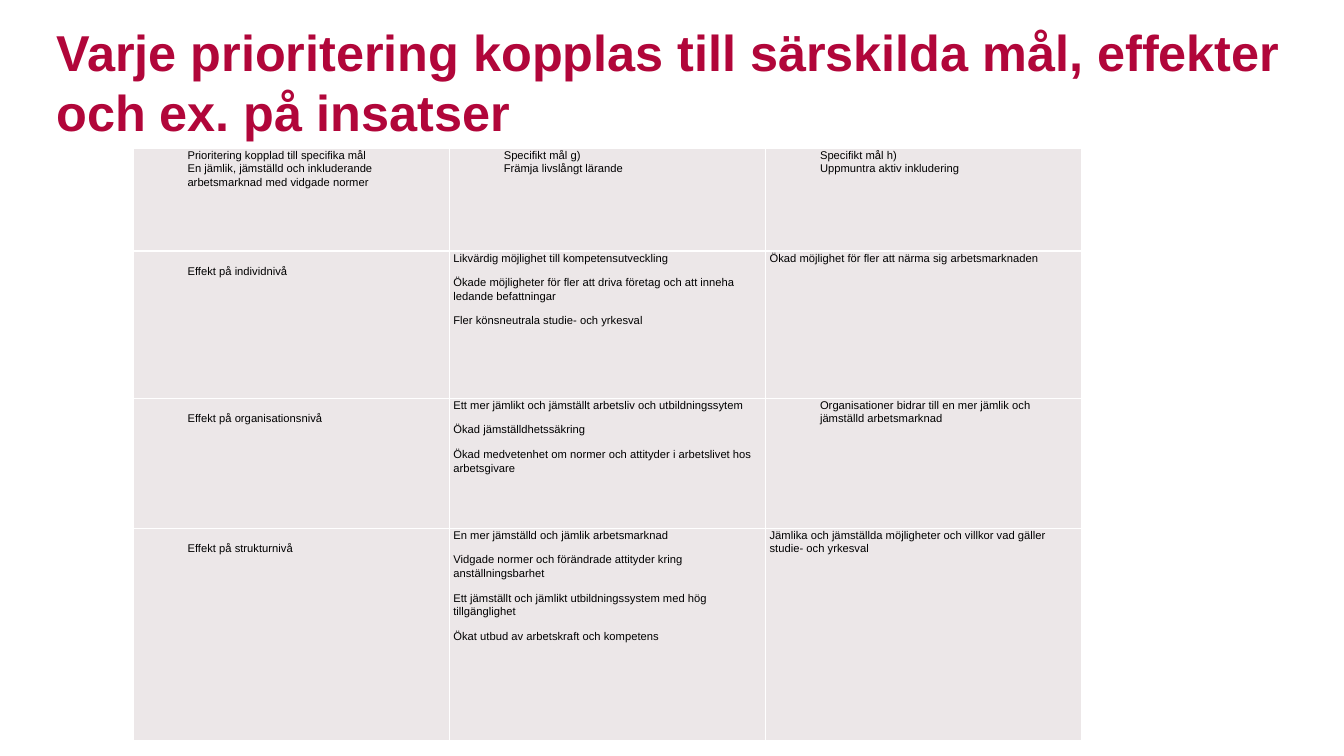
"""Build a slide linking a priority to specific goals and effects at three levels."""
import pptx
import pptx.dml.color
import pptx.enum.text
import pptx.oxml
import pptx.oxml.ns
import pptx.util

Inches = pptx.util.Inches
Pt = pptx.util.Pt
RGBColor = pptx.dml.color.RGBColor

CRIMSON = RGBColor(0xB1, 0x06, 0x3A)
BLACK = RGBColor(0, 0, 0)
WHITE = RGBColor(0xFF, 0xFF, 0xFF)
WARM_GREY = RGBColor(0xEC, 0xE7, 0xE8)

TITLE_FONT = {"name": "Arial", "size": Pt(36), "bold": True}
CELL_FONT = {"name": "Arial", "size": Pt(8), "bold": False}
TITLE_FRAME = {
    "word_wrap": True,
    "vertical_anchor": pptx.enum.text.MSO_ANCHOR.MIDDLE,
    "margin_bottom": Inches(0.59),
}
CELL_MARGINS = {
    "margin_left": Inches(0.04),
    "margin_right": Inches(0.04),
    "margin_top": 0,
    "margin_bottom": 0,
}
PLAIN = {"indent": 0, "after": Pt(8), "top": 0}
INDENTED = {"indent": Inches(0.5), "after": Pt(0), "top": 0}
LEVEL = {**INDENTED, "top": Inches(0.13)}

TITLE = "Varje prioritering kopplas till särskilda mål, effekter och ex. på insatser"
ROW_HEIGHTS = [1.02, 1.46, 1.29, 2.11]
EFFECTS = [
    [
        (INDENTED, ["Prioritering kopplad till specifika mål",
                    "En jämlik, jämställd och inkluderande arbetsmarknad med vidgade normer"]),
        (INDENTED, ["Specifikt mål g)", "Främja livslångt lärande"]),
        (INDENTED, ["Specifikt mål h)", "Uppmuntra aktiv inkludering"]),
    ],
    [
        (LEVEL, ["Effekt på individnivå"]),
        (PLAIN, ["Likvärdig möjlighet till kompetensutveckling",
                 "Ökade möjligheter för fler att driva företag och att inneha ledande befattningar",
                 "Fler könsneutrala studie- och yrkesval"]),
        (PLAIN, ["Ökad möjlighet för fler att närma sig arbetsmarknaden"]),
    ],
    [
        (LEVEL, ["Effekt på organisationsnivå"]),
        (PLAIN, ["Ett mer jämlikt och jämställt arbetsliv och utbildningssytem",
                 "Ökad jämställdhetssäkring",
                 "Ökad medvetenhet om normer och attityder i arbetslivet hos arbetsgivare"]),
        (INDENTED, ["Organisationer bidrar till en mer jämlik och jämställd arbetsmarknad"]),
    ],
    [
        (LEVEL, ["Effekt på strukturnivå"]),
        (PLAIN, ["En mer jämställd och jämlik arbetsmarknad",
                 "Vidgade normer och förändrade attityder kring anställningsbarhet",
                 "Ett jämställt och jämlikt utbildningssystem med hög tillgänglighet",
                 "Ökat utbud av arbetskraft och kompetens"]),
        (PLAIN, ["Jämlika och jämställda möjligheter och villkor vad gäller studie- och yrkesval"]),
    ],
]


def apply_format(target, values):
    """Set each named attribute on the target."""
    for name, value in values.items():
        setattr(target, name, value)


def write_paragraph(paragraph, wording, font, colour):
    """Write one run of text in the given font and colour."""
    run = paragraph.add_run()
    run.text = wording
    apply_format(run.font, font)
    run.font.color.rgb = colour


def add_title(slide, left, top, width, height):
    """Place the slide heading in the given box."""
    heading = slide.shapes.add_textbox(left, top, width, height)
    apply_format(heading.text_frame, TITLE_FRAME)
    write_paragraph(heading.text_frame.paragraphs[0], TITLE, TITLE_FONT, CRIMSON)


def add_borders(cell):
    """Draw thin white lines on all four sides of a cell."""
    properties = cell._tc.get_or_add_tcPr()
    for side in "LRTB":
        properties.append(pptx.oxml.parse_xml(
            f'<a:ln{side} {pptx.oxml.ns.nsdecls("a")} w="{Pt(1)}">'
            f'<a:solidFill><a:srgbClr val="{WHITE}"/></a:solidFill></a:ln{side}>'))


def fill_cell(cell, layout, wordings):
    """Format one cell and write its paragraphs."""
    add_borders(cell)
    cell.fill.solid()
    cell.fill.fore_color.rgb = WARM_GREY
    apply_format(cell, {**CELL_MARGINS, "margin_top": layout["top"]})
    frame = cell.text_frame
    for index, wording in enumerate(wordings):
        paragraph = frame.add_paragraph() if index else frame.paragraphs[0]
        apply_format(paragraph, {"line_spacing": 1.07, "space_after": layout["after"]})
        paragraph._p.get_or_add_pPr().set("marL", str(layout["indent"]))
        write_paragraph(paragraph, wording, CELL_FONT, BLACK)


def add_effects_table(slide, left, top, width, height):
    """Place the table of goals and effects in the given box."""
    table = slide.shapes.add_table(
        len(EFFECTS), len(EFFECTS[0]), left, top, width, height).table
    apply_format(table, {"first_row": False, "horz_banding": False})
    for row, share, contents in zip(table.rows, ROW_HEIGHTS, EFFECTS):
        row.height = round(height * share / sum(ROW_HEIGHTS))
        for cell, (layout, wordings) in zip(row.cells, contents):
            fill_cell(cell, layout, wordings)


def main():
    """Build the slide and save it."""
    deck = pptx.Presentation()
    apply_format(deck, {"slide_width": Inches(13.33), "slide_height": Inches(7.5)})
    slide = deck.slides.add_slide(deck.slide_layouts[6])
    add_title(slide, Inches(0.46), Inches(0.31), Inches(12.45), Inches(1.54))
    add_effects_table(slide, Inches(1.32), Inches(1.47), Inches(9.41), Inches(5.88))
    deck.save("out.pptx")


if __name__ == "__main__":
    main()
